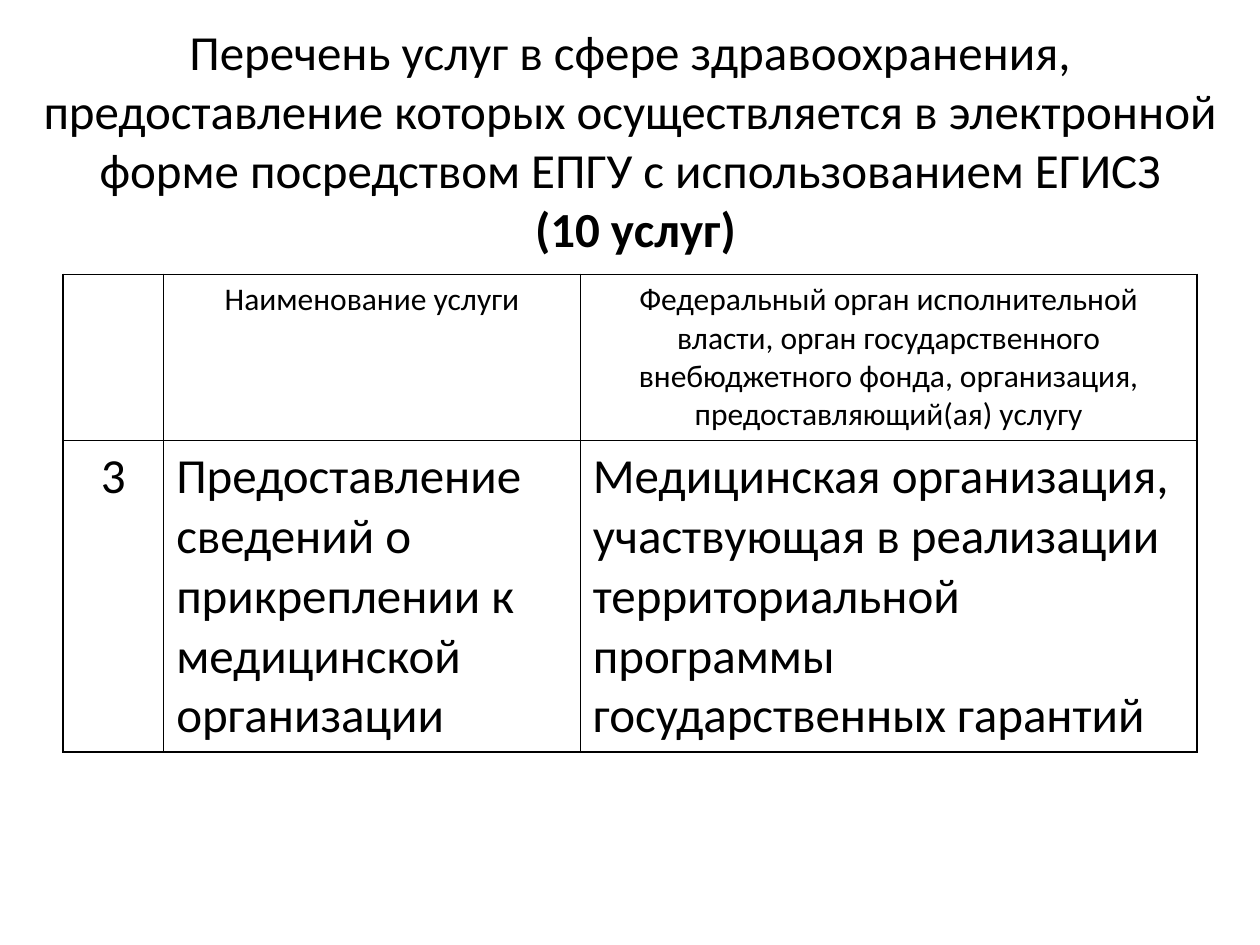
from lxml import etree
from pptx import Presentation
from pptx.dml.color import RGBColor
from pptx.enum.text import MSO_ANCHOR, PP_ALIGN
from pptx.oxml.ns import qn
from pptx.util import Cm, Pt

MIDDLE = MSO_ANCHOR.MIDDLE
LEFT, CENTER = PP_ALIGN.LEFT, PP_ALIGN.CENTER

TITLE = (
    "Перечень услуг в сфере здравоохранения, предоставление которых "
    "осуществляется в электронной форме посредством ЕПГУ с использованием ЕГИСЗ"
)
COUNT = " (10 услуг)"
HEAD = [
    "",
    "Наименование услуги",
    "Федеральный орган исполнительной власти, орган государственного "
    "внебюджетного фонда, организация, предоставляющий(ая) услугу",
]
BODY = [
    "3",
    "Предоставление сведений о прикреплении к медицинской организации",
    "Медицинская организация, участвующая в реализации территориальной "
    "программы государственных гарантий",
]


def color(code):
    return RGBColor.from_string(code)


class Deck:
    """Holds the style and the current slide."""

    font = "Calibri"
    ink = "000000"
    big, small = 28, 18
    line = 1

    def __init__(self, slide):
        self.slide = slide

    def style(self, para, size, align):
        para.alignment = align
        para.font.name = self.font
        para.font.size = Pt(size)
        para.font.color.rgb = color(self.ink)

    def title(self, text, count, left, top, width, height):
        box = self.slide.shapes.add_textbox(Cm(left), Cm(top), Cm(width), Cm(height))
        frame = box.text_frame
        frame.word_wrap = True
        frame.vertical_anchor = MIDDLE
        para = frame.paragraphs[0]
        self.style(para, self.big, CENTER)
        para.add_run().text = text
        para.add_line_break()
        run = para.add_run()
        run.text = count
        run.font.bold = True

    def border(self, cell):
        props = cell._tc.get_or_add_tcPr()
        for index, side in enumerate(("a:lnL", "a:lnR", "a:lnT", "a:lnB")):
            edge = etree.Element(qn(side), w=str(Pt(self.line)))
            fill = etree.SubElement(edge, qn("a:solidFill"))
            etree.SubElement(fill, qn("a:srgbClr"), val=self.ink)
            props.insert(index, edge)

    def cell(self, cell, text, size, align):
        cell.fill.background()
        self.border(cell)
        cell.text = text
        self.style(cell.text_frame.paragraphs[0], size, align)

    def table(self, rows, left, top, widths, heights):
        grid = self.slide.shapes.add_table(
            len(rows), len(widths), Cm(left), Cm(top), Cm(sum(widths)), Cm(sum(heights))
        ).table
        grid.first_row = grid.horz_banding = False
        for col, width in zip(grid.columns, widths):
            col.width = Cm(width)
        for row, height, (texts, size, aligns) in zip(grid.rows, heights, rows):
            row.height = Cm(height)
            for cell, text, align in zip(row.cells, texts, aligns):
                self.cell(cell, text, size, align)


def main():
    show = Presentation()
    show.slide_width, show.slide_height = Cm(25.4), Cm(19.05)
    deck = Deck(show.slides.add_slide(show.slide_layouts[6]))
    deck.title(TITLE, COUNT, 0.4, 0.53, 24.6, 4.57)
    rows = [
        (HEAD, deck.small, (CENTER, CENTER, CENTER)),
        (BODY, deck.big, (CENTER, LEFT, LEFT)),
    ]
    deck.table(rows, 1.27, 5.53, (2.03, 8.4, 12.43), (3.35, 6.28))
    show.save("out.pptx")


if __name__ == "__main__":
    main()
